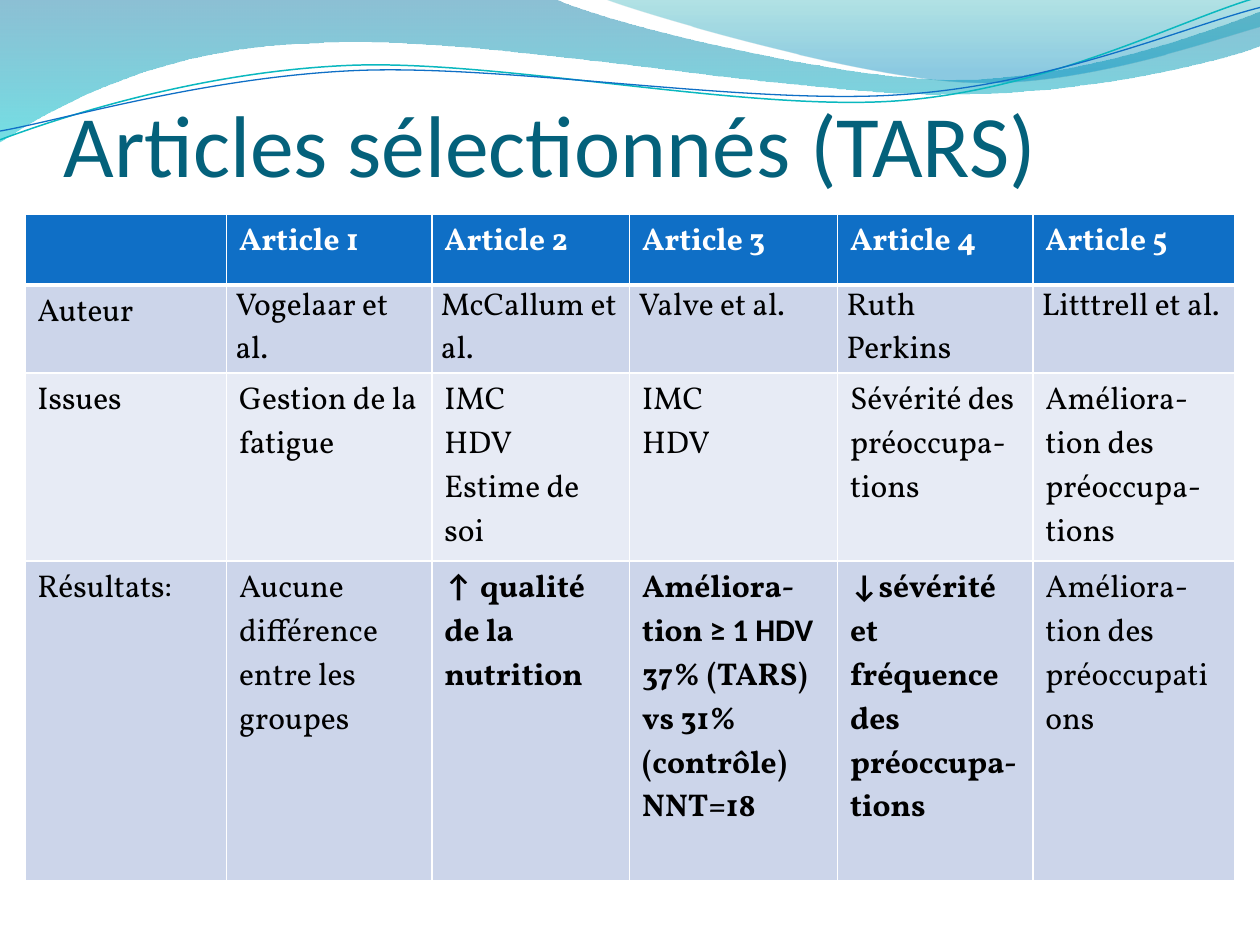
from math import cos, radians, sin

from lxml import etree
from pptx import Presentation
from pptx.dml.color import RGBColor
from pptx.enum import text
from pptx.oxml.ns import qn
from pptx.util import Pt

COLORS = {
    "title": "04617B", "header": "0F6FC6", "band": "CCD5EA", "light": "E7EBF5",
    "white": "FFFFFF", "black": "000000", "teal_line": "0AB8BF", "blue_line": "0F6FC6",
    "back_top": "0074A1", "back_bottom": "00C6CF",
    "front_top": "00A1A9", "front_bottom": "008BBF",
}
BODY, SANS = "Vollkorn", "Calibri"
TILT = -2.7

# Outlines start with a point; then 2 numbers are a line, 6 are a Bézier curve.
BACK_WAVE = [
    (0, 0), (316.8, -0.7),
    (342.7, 12.2, 478.1, 45.4, 545.8, 45.4), (614.2, 45.4, 689.8, 18.7, 720, 6.5),
    (720.7, 25.9),
    (707.8, 31.7, 626.4, 54.7, 537.1, 54), (447.8, 54, 275, 20.2, 185, 24.5),
    (92.9, 25.9, 33.1, 59.8, -0.7, 81.4), (0, 0),
]
FRONT_WAVE = [
    (344.9, -0.7),
    (366.5, 7.9, 491, 44.6, 553.7, 46.8), (616.3, 49.7, 691.9, 23, 720, 15.1),
    (720, 0), (344.9, -0.7),
]
TEAL_CURVE = [
    (0, 79.9), (34.6, 67, 113.8, 41, 199.4, 37.4),
    (284.4, 33.8, 427, 64.1, 513.4, 57.6), (599.8, 51.1, 675.4, 10.8, 718.6, -1.4),
]
BLUE_CURVE = [
    (0, 74.9), (33.8, 69.1, 118.1, 43.9, 203.8, 40.3),
    (290.2, 36.7, 429.8, 60.5, 516.2, 54), (601.9, 48.2, 677.5, 15.1, 720, 4.3),
]

COL_WIDTHS = [115.2, 117.4, 113, 118.8, 111.6, 115.2]
ROW_HEIGHTS = [40.3, 50.4, 107.4, 182.8]
ROW_FILLS = ["header", "band", "light", "band"]
# A list is a bold cell made of (text, font) runs.
ROWS = [
    [""] + [f"Article {n}" for n in range(1, 6)],
    ["Auteur", "Vogelaar et al.", "McCallum et al.", "Valve et al.", "Ruth Perkins",
     "Litttrell et al."],
    ["Issues", "Gestion de la fatigue", "IMC\vHDV\nEstime de soi", "IMC\nHDV",
     "Sévérité des préoccupa-tions", "Améliora-tion des préoccupa-tions"],
    ["Résultats:", "Aucune différence entre les groupes",
     [("↑ ", SANS), ("qualité de la nutrition", BODY)],
     [("Améliora-tion ", BODY), ("≥ 1 HDV ", SANS),
      ("37% (TARS) vs 31% (contrôle) NNT=18", BODY)],
     [("↓", SANS), ("sévérité et fréquence des préoccupa-tions", BODY)],
     "Améliora-tion des préoccupations"],
]


def rgb(name):
    return RGBColor.from_string(COLORS[name])


def turn(x, y, degrees):
    """Turn a point about the middle of the banner."""
    cx, cy, a = 360, 41.4, radians(degrees)
    dx, dy = x - cx, y - cy
    return cx + dx * cos(a) - dy * sin(a), cy + dx * sin(a) + dy * cos(a)


def add_outline(s, left, top, outline, rotation=0):
    """Draw an outline whose six-number segments become Bézier curves."""
    points = [turn(x, y, -rotation) for seg in outline
              for x, y in zip(seg[::2], seg[1::2])]
    points = [(Pt(left + x), Pt(top + y)) for x, y in points]
    builder = s.shapes.build_freeform(*points[0])
    builder.add_line_segments(points[1:], close=outline[0] == outline[-1])
    sp = builder.convert_to_shape()
    lines = iter(list(sp._element.iter(qn("a:lnTo"))))
    for seg in outline[1:]:
        line = next(lines)
        if len(seg) == 6:
            line.tag = qn("a:cubicBezTo")
            for _ in range(2):
                extra = next(lines)
                line.append(extra[0])
                extra.getparent().remove(extra)
    sp.rotation = rotation
    sp.shadow.inherit = False
    return sp


def add_wave(s, left, top, outline, stops):
    """Draw a filled wave; stops are (position, colour, opacity in percent)."""
    sp = add_outline(s, left, top, outline)
    sp.line.fill.background()
    sp.fill.gradient()
    sp.fill.gradient_angle = 270
    for stop, (position, color, _) in zip(sp.fill.gradient_stops, stops):
        stop.position = position
        stop.color.rgb = rgb(color)
    for clr, (_, _, opacity) in zip(sp._element.spPr.iter(qn("a:srgbClr")), stops):
        etree.SubElement(clr, qn("a:alpha"), val=str(opacity * 1000))


def add_curve(s, left, top, outline, color, width):
    sp = add_outline(s, left, top, outline, TILT)
    sp.fill.background()
    sp.line.color.rgb = rgb(color)
    sp.line.width = Pt(width)


def add_banner(s, left, top):
    add_wave(s, left, top, BACK_WAVE, [(0, "back_top", 45), (1, "back_bottom", 55)])
    add_wave(s, left, top, FRONT_WAVE, [(0, "front_top", 30), (0.8, "front_bottom", 45)])
    add_curve(s, left, top, TEAL_CURVE, "teal_line", 0.85)
    add_curve(s, left, top, BLUE_CURVE, "blue_line", 0.75)


def add_title(s, left, top, width, height):
    tf = s.shapes.add_textbox(Pt(left), Pt(top), Pt(width), Pt(height)).text_frame
    tf.word_wrap = True
    tf.vertical_anchor = text.MSO_ANCHOR.BOTTOM
    tf.margin_left = tf.margin_right = tf.margin_bottom = 0
    p = tf.paragraphs[0]
    p.text = "Articles sélectionnés (TARS)"
    p.font.size, p.font.name = Pt(50), SANS
    p.font.color.rgb = rgb("title")


def set_borders(cell, top, bottom):
    tcPr = cell._tc.get_or_add_tcPr()
    for tag, width in (("lnL", 1), ("lnR", 1), ("lnT", top), ("lnB", bottom)):
        ln = etree.SubElement(tcPr, qn(f"a:{tag}"), w=str(Pt(width)))
        fill = etree.SubElement(ln, qn("a:solidFill"))
        etree.SubElement(fill, qn("a:srgbClr"), val=COLORS["white"])


def fill_cell(cell, content, bold, color):
    tf = cell.text_frame
    if isinstance(content, list):
        bold = True
        for words, font in content:
            r = tf.paragraphs[0].add_run()
            r.text, r.font.name = words, font
    else:
        tf.text = content
    for p in tf.paragraphs:
        p.font.size, p.font.name, p.font.bold = Pt(18), BODY, bold
        p.font.color.rgb = rgb(color)


def add_articles_table(s, left, top):
    table = s.shapes.add_table(len(ROWS), len(COL_WIDTHS), Pt(left), Pt(top),
                               Pt(sum(COL_WIDTHS)), Pt(sum(ROW_HEIGHTS))).table
    for column, width in zip(table.columns, COL_WIDTHS):
        column.width = Pt(width)
    for i, (row, height) in enumerate(zip(table.rows, ROW_HEIGHTS)):
        row.height = Pt(height)
        header = i == 0
        for j, (cell, content) in enumerate(zip(row.cells, ROWS[i])):
            set_borders(cell, 3 if i == 1 else 1, 3 if header else 1)
            cell.fill.solid()
            cell.fill.fore_color.rgb = rgb(ROW_FILLS[i])
            fill_cell(cell, content, header, "white" if header else "black")
            if i == 1 and j > 0:
                cell.margin_left = cell.margin_right = Pt(5.2)
                cell.margin_top = cell.margin_bottom = 0


def main():
    prs = Presentation()
    prs.slide_width, prs.slide_height = Pt(720), Pt(540)
    s = prs.slides.add_slide(prs.slide_layouts[6])
    add_banner(s, 0, 0)
    add_title(s, 36.3, 32, 648, 79.2)
    add_articles_table(s, 14.2, 122.6)
    prs.save("out.pptx")


if __name__ == "__main__":
    main()
